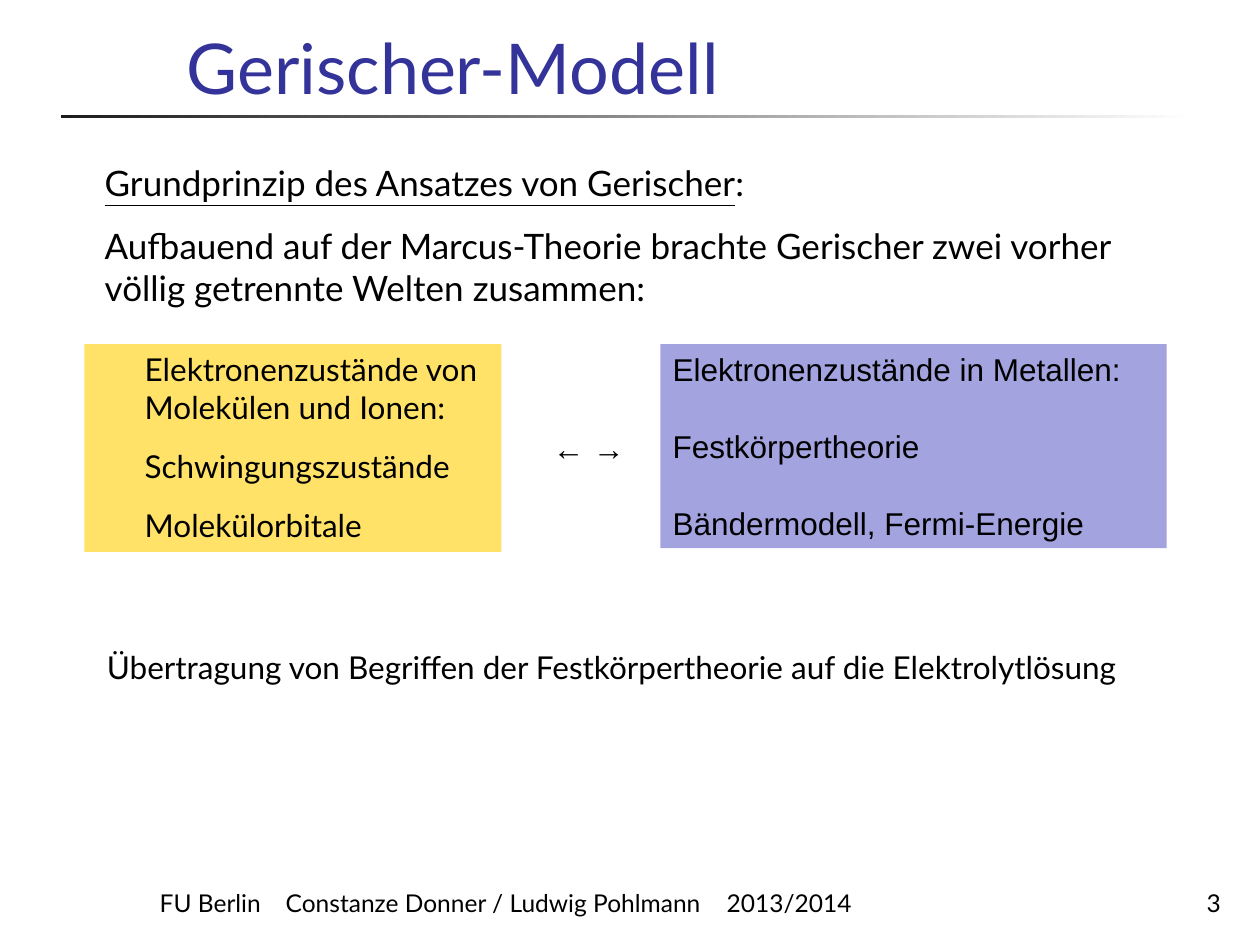
from lxml.etree import SubElement
from pptx import Presentation
from pptx.dml.color import RGBColor
from pptx.enum.shapes import MSO_SHAPE
from pptx.enum.text import MSO_ANCHOR, MSO_AUTO_SIZE, PP_ALIGN
from pptx.oxml.ns import qn
from pptx.util import Pt

TITLE = "Gerischer-Modell"
INTRO = [
    [("Grundprinzip des Ansatzes von Gerischer", True), (":", False)],
    ["Aufbauend auf der Marcus-Theorie brachte Gerischer zwei vorher "
     "völlig getrennte Welten zusammen:"],
]
MOLECULES = ["Elektronenzustände von Molekülen und Ionen:",
             "Schwingungszustände", "Molekülorbitale"]
METALS = ["Elektronenzustände in Metallen:", "Festkörpertheorie",
          "Bändermodell, Fermi-Energie"]
ARROWS = ["← →"]
CONCLUSION = ["Übertragung von Begriffen der Festkörpertheorie auf die Elektrolytlösung"]
FOOTER = ["FU Berlin", "Constanze Donner / Ludwig Pohlmann", "2013/2014"]
FOOTER_TABS = [100, 369]
PAGE_NUMBER = ["3"]


def color(value):
    return RGBColor.from_string(value)


def place(shape, left, top, width, height):
    for name, value in zip(("left", "top", "width", "height"), (left, top, width, height)):
        setattr(shape, name, Pt(value))


def write(shape, paragraphs, size, font="Lato", ink="000000", indent=0, gap=0,
          align=PP_ALIGN.LEFT, anchor=MSO_ANCHOR.TOP, wrap=True, tabs=()):
    frame = shape.text_frame
    frame_format = {"word_wrap": wrap, "auto_size": MSO_AUTO_SIZE.NONE,
                    "vertical_anchor": anchor}
    for name, value in frame_format.items():
        setattr(frame, name, value)
    for index, content in enumerate(paragraphs):
        para = frame.add_paragraph() if index else frame.paragraphs[0]
        para.alignment = align
        para.space_before = Pt(gap if index else 0)
        properties = para._p.get_or_add_pPr()
        properties.set("marL", str(Pt(indent)))
        properties.set("indent", "0")
        SubElement(properties, qn("a:buNone"))
        if tabs:
            stops = SubElement(properties, qn("a:tabLst"))
            for position in tabs:
                SubElement(stops, qn("a:tab"), pos=str(Pt(position)), algn="l")
        for part in [content] if isinstance(content, str) else content:
            text, underline = (part, False) if isinstance(part, str) else part
            span = para.add_run()
            span.text = text
            span.font.color.rgb = color(ink)
            span_format = {"size": Pt(size), "name": font, "underline": underline}
            for name, value in span_format.items():
                setattr(span.font, name, value)


def add_text(page, area, paragraphs, size, **options):
    box = page.shapes.add_textbox(*map(Pt, area))
    write(box, paragraphs, size, **options)


def add_rectangle(page, area):
    shape = page.shapes.add_shape(MSO_SHAPE.RECTANGLE, *map(Pt, area))
    shape.shadow.inherit = False
    shape.line.fill.background()
    return shape


def add_panel(page, area, fill, paragraphs, **options):
    panel = add_rectangle(page, area)
    panel.fill.solid()
    panel.fill.fore_color.rgb = color(fill)
    write(panel, paragraphs, 18, **options)


def main():
    deck = Presentation()
    deck.slide_width, deck.slide_height = Pt(720), Pt(540)
    page = deck.slides.add_slide(deck.slide_layouts[1])

    rule = add_rectangle(page, (34.6, 65.5, 648, 2.2))
    rule.fill.gradient()
    rule.fill.gradient_angle = 0
    for stop, value in zip(rule.fill.gradient_stops, ("1C1C1C", "FFFFFF")):
        stop.color.rgb = color(value)

    title, body = page.placeholders
    place(title, 99.4, 16.6, 604.8, 49)
    write(title, [TITLE], 40, ink="333399", anchor=MSO_ANCHOR.BOTTOM)
    place(body, 25.2, 88.6, 646.6, 92.2)
    write(body, INTRO, 20, indent=27.4, gap=12)

    add_panel(page, (48.2, 196.6, 238.3, 118.8), "FFE267", MOLECULES, indent=27.4, gap=12)
    add_panel(page, (377.3, 196.6, 289.4, 116.6), "A3A3E0", METALS, font="Arial", gap=22.2)
    add_text(page, (308.9, 241.9, 62.6, 28.8), ARROWS, 18, font="Arial")
    add_text(page, (54, 366.5, 605.5, 28.8), CONCLUSION, 18, wrap=False)

    add_text(page, (84.2, 491.8, 488, 36), ["\t".join(FOOTER)], 14,
             anchor=MSO_ANCHOR.BOTTOM, tabs=FOOTER_TABS)
    add_text(page, (609.8, 491.8, 95, 36), PAGE_NUMBER, 14,
             align=PP_ALIGN.RIGHT, anchor=MSO_ANCHOR.BOTTOM)
    deck.save("out.pptx")


if __name__ == "__main__":
    main()
